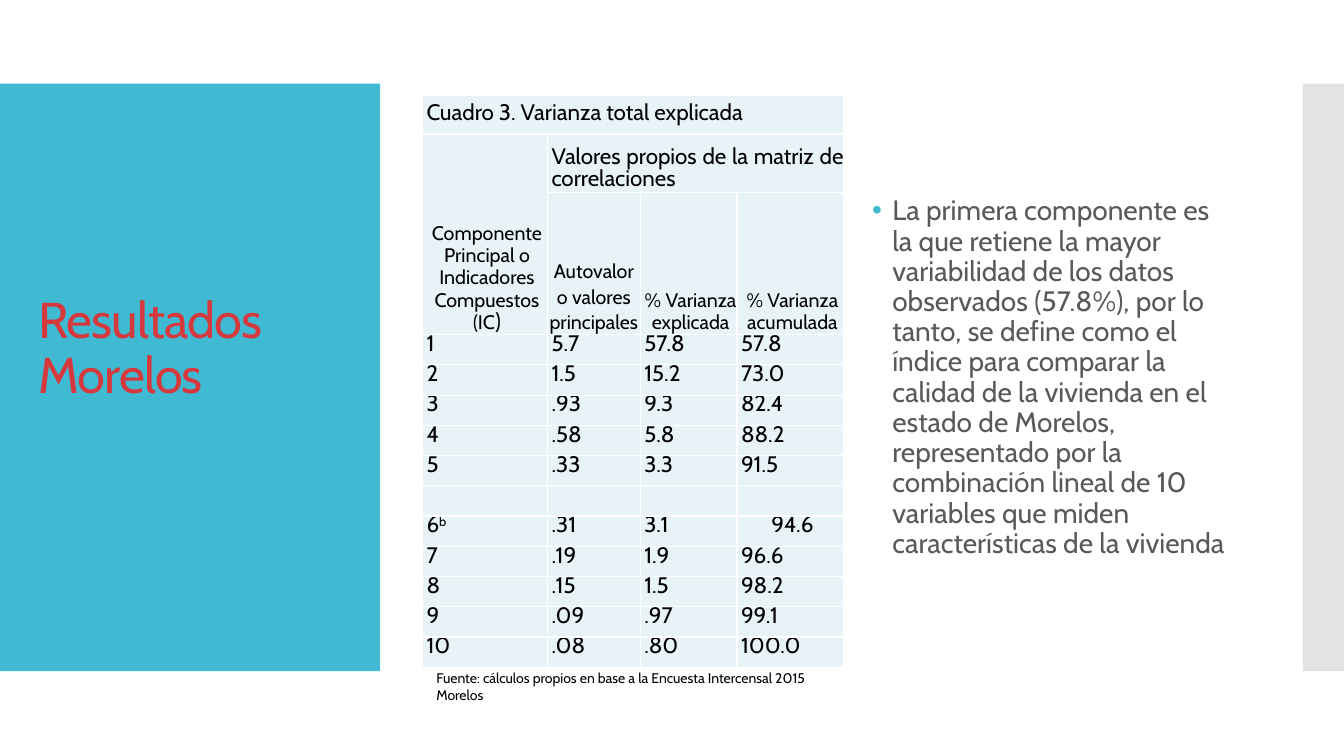
from dataclasses import dataclass

from lxml.etree import SubElement
from pptx import Presentation
from pptx.dml.color import RGBColor
from pptx.enum.shapes import MSO_SHAPE
from pptx.enum.text import MSO_ANCHOR, MSO_AUTO_SIZE, PP_ALIGN
from pptx.oxml import parse_xml
from pptx.oxml.ns import nsdecls, qn
from pptx.util import Inches, Pt


@dataclass(frozen=True)
class Theme:
    font: str = "Cabin"
    accent: str = "40BAD2"
    side: str = "C8C8C8"
    title: str = "D5393D"
    body: str = "595959"
    ink: str = "000000"
    cell: str = "E8F3F7"
    border: str = "FFFFFF"
    title_size: int = 36
    body_size: int = 20
    table_size: int = 16
    header_size: int = 14
    source_size: int = 10


THEME = Theme()

TITLE = "Resultados\vMorelos"
CONCLUSION = (
    "La primera componente es la que retiene la mayor variabilidad de los datos "
    "observados (57.8%), por lo tanto, se define como el índice para comparar la "
    "calidad de la vivienda en el estado de Morelos, representado por la combinación "
    "lineal de 10 variables que miden características de la vivienda"
)
SOURCE = "Fuente: cálculos propios en base a la Encuesta Intercensal 2015 Morelos"
CAPTION = "Cuadro 3. Varianza total explicada"
COMPONENT_HEADER = ("Componente", "Principal o Indicadores Compuestos (IC")
GROUP_HEADER = "Valores propios de la matriz de correlaciones"
AUTOVALUE_HEADER = "Autovalor o valores principales"
VARIANCE_HEADERS = ("% Varianza explicada", "% Varianza acumulada")
COMPONENTS = [
    ("1", "5.7", "57.8", "57.8"),
    ("2", "1.5", "15.2", "73.0"),
    ("3", ".93", "9.3", "82.4"),
    ("4", ".58", "5.8", "88.2"),
    ("5", ".33", "3.3", "91.5"),
    ("", "", "", ""),
    ("6", ".31", "3.1", "94.6"),
    ("7", ".19", "1.9", "96.6"),
    ("8", ".15", "1.5", "98.2"),
    ("9", ".09", ".97", "99.1"),
    ("10", ".08", ".80", "100.0"),
]
HEADER_ROWS = 3
NOTED_ROW = HEADER_ROWS + 6
COLUMN_WIDTHS = (1.24, 0.92, 0.96, 1.06)
ROW_HEIGHTS = (0.38, 0.58, 1.41) + (0.3,) * len(COMPONENTS)
BANDS = [
    (0, 3.77, THEME.accent, 100),
    (12.92, 0.42, THEME.side, 50),
]


def box(left, top, width, height):
    return [Inches(length) for length in (left, top, width, height)]


def place(shape, *bounds):
    shape.left, shape.top, shape.width, shape.height = box(*bounds)


def style(paragraph, size, color, align=PP_ALIGN.LEFT, spacing=None):
    paragraph.font.name = THEME.font
    paragraph.font.size = Pt(size)
    paragraph.font.color.rgb = RGBColor.from_string(color)
    paragraph.alignment = align
    paragraph.line_spacing = spacing


def add_band(slide, left, width, color, opacity):
    band = slide.shapes.add_shape(MSO_SHAPE.RECTANGLE, *box(left, 0.83, width, 5.83))
    band.shadow.inherit = False
    band.line.fill.background()
    band.fill.solid()
    band.fill.fore_color.rgb = RGBColor.from_string(color)
    tint = band._element.spPr.find(qn("a:solidFill"))[0]
    SubElement(tint, qn("a:alpha")).set("val", str(opacity * 1000))
    slide.shapes._spTree.insert(2, band._element)


def format_cell(cell):
    cell.margin_left = cell.margin_right = cell.margin_top = cell.margin_bottom = 0
    cell.fill.solid()
    cell.fill.fore_color.rgb = RGBColor.from_string(THEME.cell)
    for position, edge in enumerate(("lnL", "lnR", "lnT", "lnB")):
        cell._tc.get_or_add_tcPr().insert(position, parse_xml(
            f'<a:{edge} {nsdecls("a")} w="12700"><a:solidFill>'
            f'<a:srgbClr val="{THEME.border}"/></a:solidFill></a:{edge}>'))


def write_cell(cell, text, size=THEME.table_size, align=PP_ALIGN.JUSTIFY,
               anchor=MSO_ANCHOR.TOP, spacing=Pt(16), indent=0.04):
    cell.text = text
    cell.vertical_anchor = anchor
    for paragraph in cell.text_frame.paragraphs:
        style(paragraph, size, THEME.ink, align, spacing)
        paragraph._p.get_or_add_pPr().set("marL", str(Inches(indent)))


def add_variance_table(slide):
    frame = slide.shapes.add_table(
        len(ROW_HEIGHTS), len(COLUMN_WIDTHS),
        *box(4.19, 0.95, sum(COLUMN_WIDTHS), sum(ROW_HEIGHTS)))
    table = frame.table
    table.first_row = table.horz_banding = False
    for column, width in zip(table.columns, COLUMN_WIDTHS):
        column.width = Inches(width)
    for row, height in zip(table.rows, ROW_HEIGHTS):
        row.height = Inches(height)
    for cell in table.iter_cells():
        format_cell(cell)

    table.cell(0, 0).merge(table.cell(0, 3))
    table.cell(1, 0).merge(table.cell(2, 0))
    table.cell(1, 1).merge(table.cell(1, 3))

    write_cell(table.cell(0, 0), CAPTION, anchor=MSO_ANCHOR.MIDDLE)
    write_cell(table.cell(1, 1), GROUP_HEADER, anchor=MSO_ANCHOR.BOTTOM)
    heading = dict(size=THEME.header_size, align=PP_ALIGN.CENTER, anchor=MSO_ANCHOR.BOTTOM)
    component = table.cell(1, 0)
    write_cell(component, "\n".join(COMPONENT_HEADER), **heading)
    closing = component.text_frame.paragraphs[-1].add_run()
    closing.text = ")"
    closing.font.size = Pt(THEME.table_size)
    write_cell(table.cell(2, 1), AUTOVALUE_HEADER, spacing=1.07, indent=0, **heading)
    for column, header in enumerate(VARIANCE_HEADERS, 2):
        write_cell(table.cell(2, column), header, **heading)

    for row, values in enumerate(COMPONENTS, HEADER_ROWS):
        for column, value in enumerate(values):
            write_cell(table.cell(row, column), value)
    note = table.cell(NOTED_ROW, 0).text_frame.paragraphs[0].add_run()
    note.text = "b"
    note._r.get_or_add_rPr().set("baseline", "30000")
    table.cell(NOTED_ROW, 3).text_frame.paragraphs[0].alignment = PP_ALIGN.CENTER


def add_title(title):
    place(title, 0.28, 1.23, 3.22, 5.03)
    frame = title.text_frame
    frame.text = TITLE
    frame.auto_size = MSO_AUTO_SIZE.NONE
    frame.vertical_anchor = MSO_ANCHOR.MIDDLE
    frame.margin_bottom = Inches(0.6)
    style(frame.paragraphs[0], THEME.title_size, THEME.title, spacing=0.9)
    for run in frame.paragraphs[0].runs:
        run._r.get_or_add_rPr().set("spc", "-60")


def add_conclusion(body):
    place(body, 8.55, 0.95, 3.8, 5.6)
    frame = body.text_frame
    frame.text = CONCLUSION
    frame.auto_size = MSO_AUTO_SIZE.NONE
    frame.vertical_anchor = MSO_ANCHOR.MIDDLE
    paragraph = frame.paragraphs[0]
    style(paragraph, THEME.body_size, THEME.body, spacing=0.9)
    paragraph.space_before = Pt(12)
    properties = paragraph._p.get_or_add_pPr()
    properties.set("marL", str(Inches(0.2)))
    properties.set("indent", str(-Inches(0.2)))
    defaults = properties.find(qn("a:defRPr"))
    defaults.addprevious(parse_xml(
        f'<a:buClr {nsdecls("a")}><a:srgbClr val="{THEME.accent}"/></a:buClr>'))
    defaults.addprevious(parse_xml(f'<a:buChar {nsdecls("a")} char="•"/>'))


def add_source(slide):
    frame = slide.shapes.add_textbox(*box(4.23, 6.59, 4.3, 0.44)).text_frame
    frame.word_wrap = True
    frame.text = SOURCE
    style(frame.paragraphs[0], THEME.source_size, THEME.ink)


def main():
    deck = Presentation()
    deck.slide_width, deck.slide_height = Inches(13.33), Inches(7.5)
    slide = deck.slides.add_slide(deck.slide_layouts[1])
    for band in BANDS:
        add_band(slide, *band)
    add_title(slide.shapes.title)
    add_variance_table(slide)
    add_conclusion(slide.placeholders[1])
    add_source(slide)
    deck.save("out.pptx")


if __name__ == "__main__":
    main()
